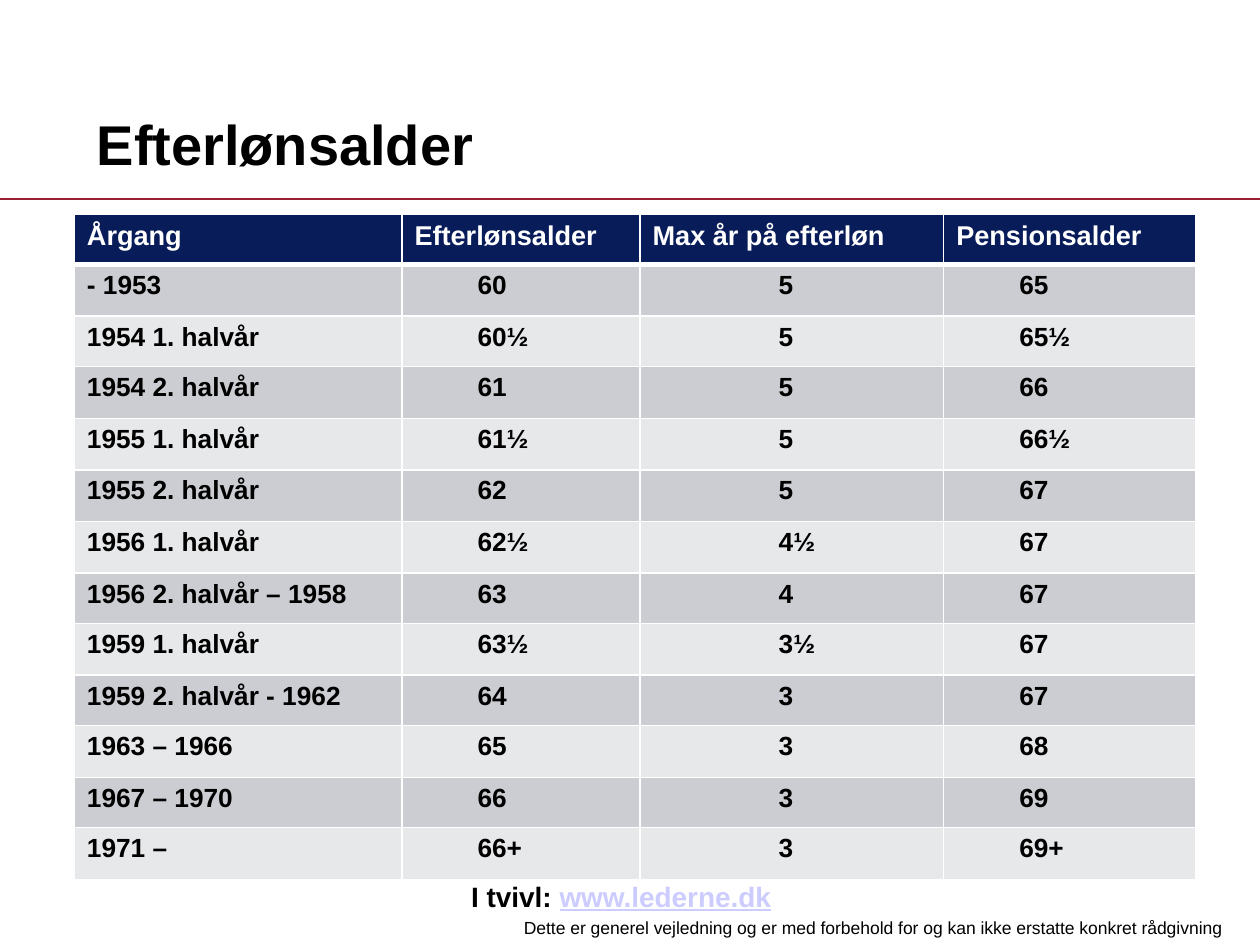
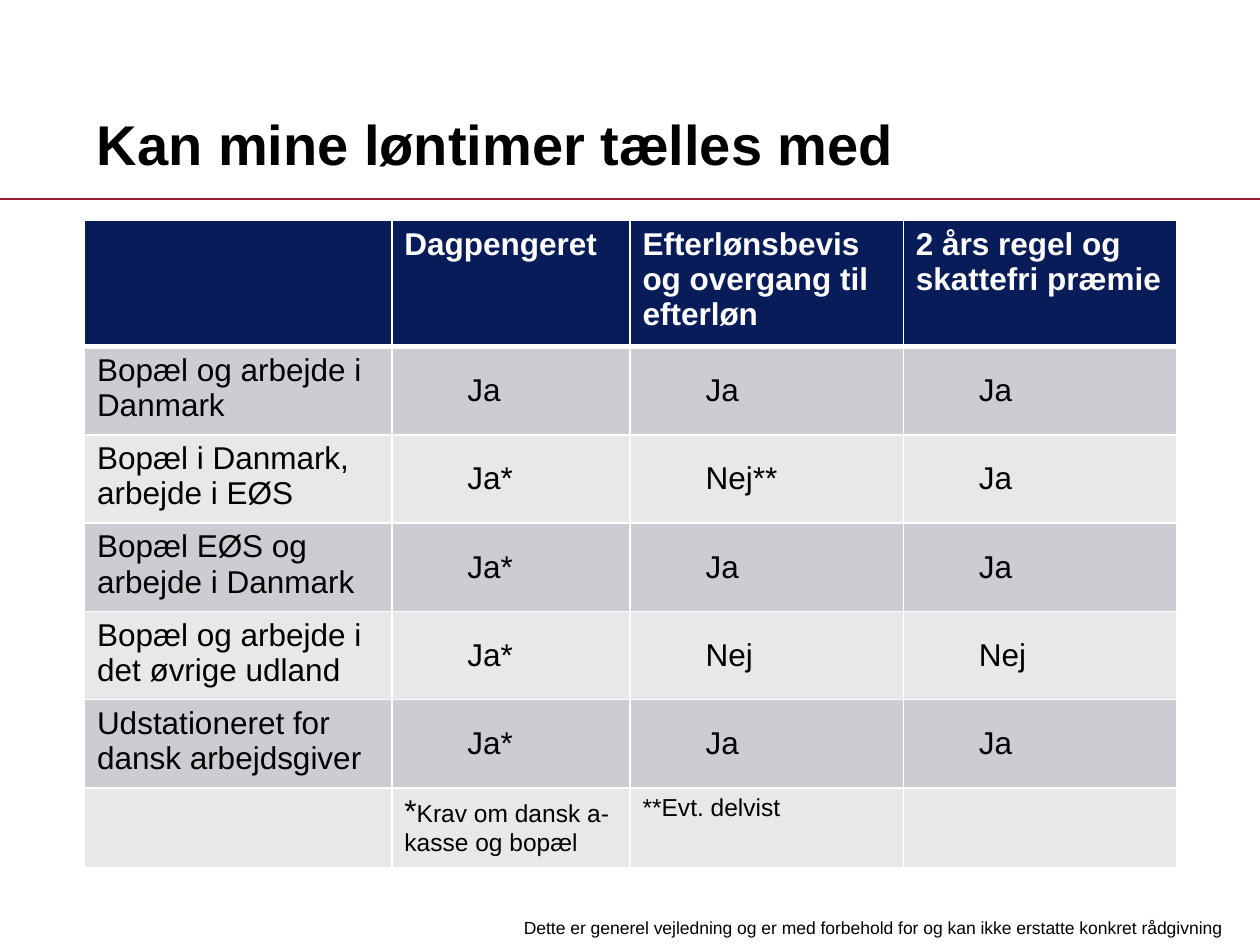
from dataclasses import dataclass
from typing import Any, NamedTuple

import lxml.etree
import pptx
import pptx.dml.color
import pptx.enum.shapes
import pptx.enum.text
import pptx.oxml.ns
import pptx.util

PX = 9144  # EMU per px, 100 px to the inch
FONT = "Arial"
COLOURS = {
    "text": "000000",
    "rule": "991F32",
    "link": "CCCCFF",
    "header": "091C5A",
    "header_text": "FFFFFF",
    "border": "FFFFFF",
    "band_dark": "CCCDD2",
    "band_light": "E7E8EA",
}
TOP = pptx.enum.text.MSO_ANCHOR.TOP
MIDDLE = pptx.enum.text.MSO_ANCHOR.MIDDLE
BOTTOM = pptx.enum.text.MSO_ANCHOR.BOTTOM
LEFT = pptx.enum.text.PP_ALIGN.LEFT
CENTER = pptx.enum.text.PP_ALIGN.CENTER
DISCLAIMER = ("Dette er generel vejledning og er med forbehold for "
              "og kan ikke erstatte konkret rådgivning")


class Span(NamedTuple):
    text: str
    size: float
    colour: str = "text"
    bold: bool = False
    underline: bool = False


class Area(NamedTuple):
    left: int
    top: int
    width: int
    height: int


@dataclass
class TableSpec:
    left: int
    top: int
    columns: list[int]
    heights: list[int]
    header: list[str]
    rows: list[list[str]]
    indents: list[int]
    header_size: float
    body_size: float
    body_bold: bool
    value_anchor: Any
    notes: list[list[Span]] | None = None


TITLE_AREA = Area(67, 45, 700, 100)
FOOTER_AREA = Area(406, 723, 590, 27)
HELP_AREA = Area(28, 693, 930, 36)
RULE_TOP = 158

AGE_TABLE = TableSpec(
    left=59, top=170, columns=[260, 189, 241, 200],
    heights=[40] + [41, 40] + [41] * 4 + [40, 41] * 3,
    header=["Årgang", "Efterlønsalder", "Max år på efterløn", "Pensionsalder"],
    rows=[
        ["- 1953", "60", "5", "65"],
        ["1954 1. halvår", "60½", "5", "65½"],
        ["1954 2. halvår", "61", "5", "66"],
        ["1955 1. halvår", "61½", "5", "66½"],
        ["1955 2. halvår", "62", "5", "67"],
        ["1956 1. halvår", "62½", "4½", "67"],
        ["1956 2. halvår – 1958", "63", "4", "67"],
        ["1959 1. halvår", "63½", "3½", "67"],
        ["1959 2. halvår - 1962", "64", "3", "67"],
        ["1963 – 1966", "65", "3", "68"],
        ["1967 – 1970", "66", "3", "69"],
        ["1971 –", "66+", "3", "69+"],
    ],
    indents=[0, 50, 100, 50],
    header_size=15.5, body_size=15, body_bold=True, value_anchor=TOP,
)

HOURS_TABLE = TableSpec(
    left=67, top=175, columns=[244, 189, 217, 217],
    heights=[93] + [66] * 5 + [60],
    header=["", "Dagpengeret", "Efterlønsbevis og overgang til efterløn",
            "2 års regel og skattefri præmie"],
    rows=[
        ["Bopæl og arbejde i Danmark", "Ja", "Ja", "Ja"],
        ["Bopæl i Danmark, arbejde i EØS", "Ja*", "Nej**", "Ja"],
        ["Bopæl EØS og arbejde i Danmark", "Ja*", "Ja", "Ja"],
        ["Bopæl og arbejde i det øvrige udland", "Ja*", "Nej", "Nej"],
        ["Udstationeret for dansk arbejdsgiver", "Ja*", "Ja", "Ja"],
    ],
    indents=[0, 50, 50, 50],
    header_size=18, body_size=18, body_bold=False, value_anchor=MIDDLE,
    notes=[[], [Span("*", 18), Span("Krav om dansk a-kasse og bopæl", 14)],
           [Span("**Evt. delvist", 14)], []],
)


def rgb(name: str) -> pptx.dml.color.RGBColor:
    return pptx.dml.color.RGBColor.from_string(COLOURS[name])


def write_spans(para: Any, spans: list[Span]) -> None:
    for span in spans:
        run = para.add_run()
        run.text = span.text
        formats = {"name": FONT, "size": pptx.util.Pt(span.size),
                   "bold": span.bold, "underline": span.underline}
        for attribute, value in formats.items():
            setattr(run.font, attribute, value)
        run.font.color.rgb = rgb(span.colour)


def add_text(page: Any, area: Area, spans: list[Span], anchor: Any = TOP,
             align: Any = LEFT) -> None:
    box = page.shapes.add_textbox(*(length * PX for length in area))
    formats = {"word_wrap": True, "vertical_anchor": anchor}
    for attribute, value in formats.items():
        setattr(box.text_frame, attribute, value)
    para = box.text_frame.paragraphs[0]
    para.alignment = align
    write_spans(para, spans)


def add_rule(page: Any) -> None:
    rule = page.shapes.add_connector(
        pptx.enum.shapes.MSO_CONNECTOR.STRAIGHT,
        0, RULE_TOP * PX, 1000 * PX, RULE_TOP * PX)
    rule.line.color.rgb = rgb("rule")
    rule.line.width = pptx.util.Pt(1)
    effects = pptx.oxml.ns.qn("a:effectLst")
    lxml.etree.SubElement(rule._element.spPr, effects)


def add_borders(cell: Any, widths: dict[str, int]) -> None:
    qn = pptx.oxml.ns.qn
    properties = cell._tc.get_or_add_tcPr()
    for side, points in widths.items():
        line = lxml.etree.SubElement(properties, qn(f"a:ln{side}"),
                                     w=str(pptx.util.Pt(points)))
        fill = lxml.etree.SubElement(line, qn("a:solidFill"))
        lxml.etree.SubElement(fill, qn("a:srgbClr"), val=COLOURS["border"])


def fill_cell(cell: Any, fill: str, spans: list[Span], indent: int,
              anchor: Any) -> None:
    cell.fill.solid()
    cell.fill.fore_color.rgb = rgb(fill)
    cell.vertical_anchor = anchor
    para = cell.text_frame.paragraphs[0]
    if indent:
        para.level = indent // 50
        para._p.get_or_add_pPr().set("marL", str(indent * PX))
    write_spans(para, spans)


def table_spans(spec: TableSpec) -> list[list[list[Span]]]:
    """Turn the header, body and notes into one grid of spans."""
    grid = [[[Span(text, spec.header_size, "header_text", True)] if text else []
             for text in spec.header]]
    grid += [[[Span(text, spec.body_size, "text", spec.body_bold)] for text in row]
             for row in spec.rows]
    return grid + ([spec.notes] if spec.notes else [])


def add_table(page: Any, spec: TableSpec) -> None:
    grid = table_spans(spec)
    area = Area(spec.left, spec.top, sum(spec.columns), sum(spec.heights))
    table = page.shapes.add_table(len(grid), len(spec.columns),
                                  *(length * PX for length in area)).table
    for attribute in ("first_row", "horz_banding"):
        setattr(table, attribute, False)
    for column, width in zip(table.columns, spec.columns):
        column.width = width * PX
    for row, height in zip(table.rows, spec.heights):
        row.height = height * PX

    for row_index, row in enumerate(grid):
        is_body = 1 <= row_index <= len(spec.rows)
        band = "band_dark" if row_index % 2 else "band_light"
        borders = {"L": 1, "R": 1, "T": 3 if row_index == 1 else 1,
                   "B": 3 if row_index == 0 else 1}
        for column_index, spans in enumerate(row):
            cell = table.cell(row_index, column_index)
            is_value = is_body and column_index > 0
            add_borders(cell, borders)
            fill_cell(cell, band if row_index else "header", spans,
                      spec.indents[column_index] if is_value else 0,
                      spec.value_anchor if is_value else TOP)


def add_page(deck: Any, title: str, spec: TableSpec) -> Any:
    page = deck.slides.add_slide(deck.slide_layouts[6])
    add_rule(page)
    add_text(page, FOOTER_AREA, [Span(DISCLAIMER, 10)])
    add_text(page, TITLE_AREA, [Span(title, 32, bold=True)], BOTTOM)
    add_table(page, spec)
    return page


def main() -> None:
    deck = pptx.Presentation()
    deck.slide_width = 1000 * PX
    deck.slide_height = 750 * PX

    # Early retirement age by birth year
    page = add_page(deck, "Efterlønsalder", AGE_TABLE)
    add_text(page, HELP_AREA,
             [Span("I tvivl: ", 16, bold=True),
              Span("www.lederne.dk", 16, "link", True, True)],
             MIDDLE, CENTER)

    # Which working hours count
    add_page(deck, "Kan mine løntimer tælles med", HOURS_TABLE)
    deck.save("out.pptx")


if __name__ == "__main__":
    main()
